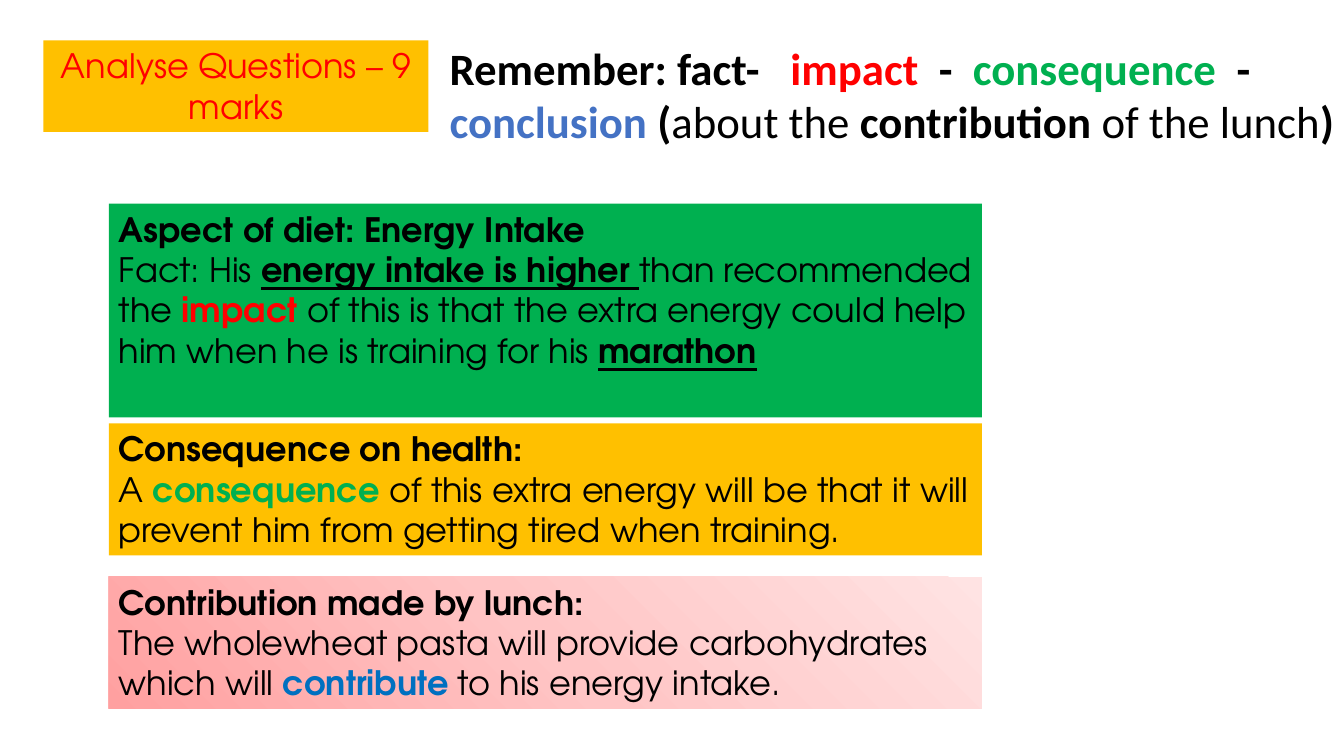
from lxml import etree
from pptx import Presentation
from pptx.dml.color import RGBColor
from pptx.enum.shapes import MSO_SHAPE
from pptx.enum.text import MSO_ANCHOR, MSO_AUTO_SIZE, PP_ALIGN
from pptx.oxml.ns import qn
from pptx.util import Inches, Pt

BLACK = RGBColor(0x00, 0x00, 0x00)
RED = RGBColor(0xFF, 0x00, 0x00)
GREEN = RGBColor(0x00, 0xB0, 0x50)
AMBER = RGBColor(0xFF, 0xC0, 0x00)
BLUE = RGBColor(0x00, 0x70, 0xC0)
SOFT_BLUE = RGBColor(0x44, 0x72, 0xC4)
PINKS = [(0, RGBColor(0xFF, 0xA0, 0xA0)),
         (50, RGBColor(0xFF, 0xC5, 0xC5)),
         (100, RGBColor(0xFF, 0xE3, 0xE3))]

BODY_FONT, REMINDER_FONT = "TeX Gyre Adventor", "Calibri"
CARD_LEFT, CARD_WIDTH = 1.08, 8.66

# A run is (text, style letters, colour): b = bold, u = underlined
TITLE = [[("Analyse Questions – 9 marks", "", RED)]]
REMINDER = [[
    ("Remember: fact-   ", "b", BLACK), ("impact", "b", RED),
    ("  -  ", "b", BLACK), ("consequence ", "b", GREEN),
    (" -  ", "b", BLACK), ("conclusion ", "b", SOFT_BLUE),
    ("(", "b", BLACK), ("about the ", "", BLACK),
    ("contribution", "b", BLACK), (" of the lunch", "", BLACK),
    (")", "b", BLACK),
]]
# A card is (top, height, fill, paragraphs)
CARDS = [
    (2.02, 2.12, GREEN, [
        [("Aspect of diet: Energy Intake", "b", BLACK)],
        [("Fact: His ", "", BLACK),
         ("energy intake is higher ", "bu", BLACK),
         ("than recommended the ", "", BLACK),
         ("impact", "b", RED),
         (" of this is that the extra energy could help him when he is "
          "training for his ", "", BLACK),
         ("marathon", "bu", BLACK)],
    ]),
    (4.2, 1.31, AMBER, [
        [("Consequence on health:", "b", BLACK)],
        [("A ", "", BLACK), ("consequence", "b", GREEN),
         (" of this extra energy will be that it will prevent him from "
          "getting tired when training.", "", BLACK)],
    ]),
    (5.72, 1.31, PINKS, [
        [("Contribution made by lunch:", "b", BLACK)],
        [("The wholewheat pasta will provide carbohydrates which will ",
          "", BLACK),
         ("contribute", "b", BLUE),
         (" to his energy intake.", "", BLACK)],
    ]),
]


def write(sp, paragraphs, font, size, align=PP_ALIGN.LEFT):
    tf = sp.text_frame
    tf.word_wrap = True
    tf.auto_size = MSO_AUTO_SIZE.NONE
    tf.vertical_anchor = MSO_ANCHOR.TOP
    for i, runs in enumerate(paragraphs):
        p = tf.add_paragraph() if i else tf.paragraphs[0]
        p.alignment = align
        p.line_spacing = 1.0
        p.space_before = Pt(0)
        for text, style, color in runs:
            r = p.add_run()
            r.text = text
            r.font.name = font
            r.font.size = Pt(size)
            r.font.bold = "b" in style
            r.font.underline = "u" in style
            r.font.color.rgb = color


def fill_from_bottom_left(sp, stops):
    """Fill with a circular gradient centred on the bottom left corner."""
    sp.fill.gradient()
    grad = sp.element.spPr.find(qn("a:gradFill"))
    for child in list(grad):
        grad.remove(child)
    stop_list = etree.SubElement(grad, qn("a:gsLst"))
    for percent, color in stops:
        gs = etree.SubElement(stop_list, qn("a:gs"), pos=str(percent * 1000))
        etree.SubElement(gs, qn("a:srgbClr"), val=str(color))
    circle = etree.SubElement(grad, qn("a:path"), {"path": "circle"})
    etree.SubElement(circle, qn("a:fillToRect"), t="100000", r="100000")


def add_card(slide, top, height, fill, paragraphs):
    sp = slide.shapes.add_shape(
        MSO_SHAPE.RECTANGLE, Inches(CARD_LEFT), Inches(top),
        Inches(CARD_WIDTH), Inches(height))
    sp.shadow.inherit = False
    sp.line.fill.background()
    if isinstance(fill, list):
        fill_from_bottom_left(sp, fill)
    else:
        sp.fill.solid()
        sp.fill.fore_color.rgb = fill
    write(sp, paragraphs, BODY_FONT, 24)


def main():
    prs = Presentation()
    prs.slide_width, prs.slide_height = Inches(13.33), Inches(7.5)
    slide = prs.slides.add_slide(prs.slide_layouts[5])

    title = slide.shapes.title
    title.left, title.top = Inches(0.43), Inches(0.4)
    title.width, title.height = Inches(3.82), Inches(0.91)
    title.fill.solid()
    title.fill.fore_color.rgb = AMBER
    write(title, TITLE, BODY_FONT, 24, PP_ALIGN.CENTER)

    for card in CARDS:
        add_card(slide, *card)

    reminder = slide.shapes.add_textbox(
        Inches(4.36), Inches(0.35), Inches(9.51), Inches(1.18))
    write(reminder, REMINDER, REMINDER_FONT, 32)

    prs.save("out.pptx")


if __name__ == "__main__":
    main()
